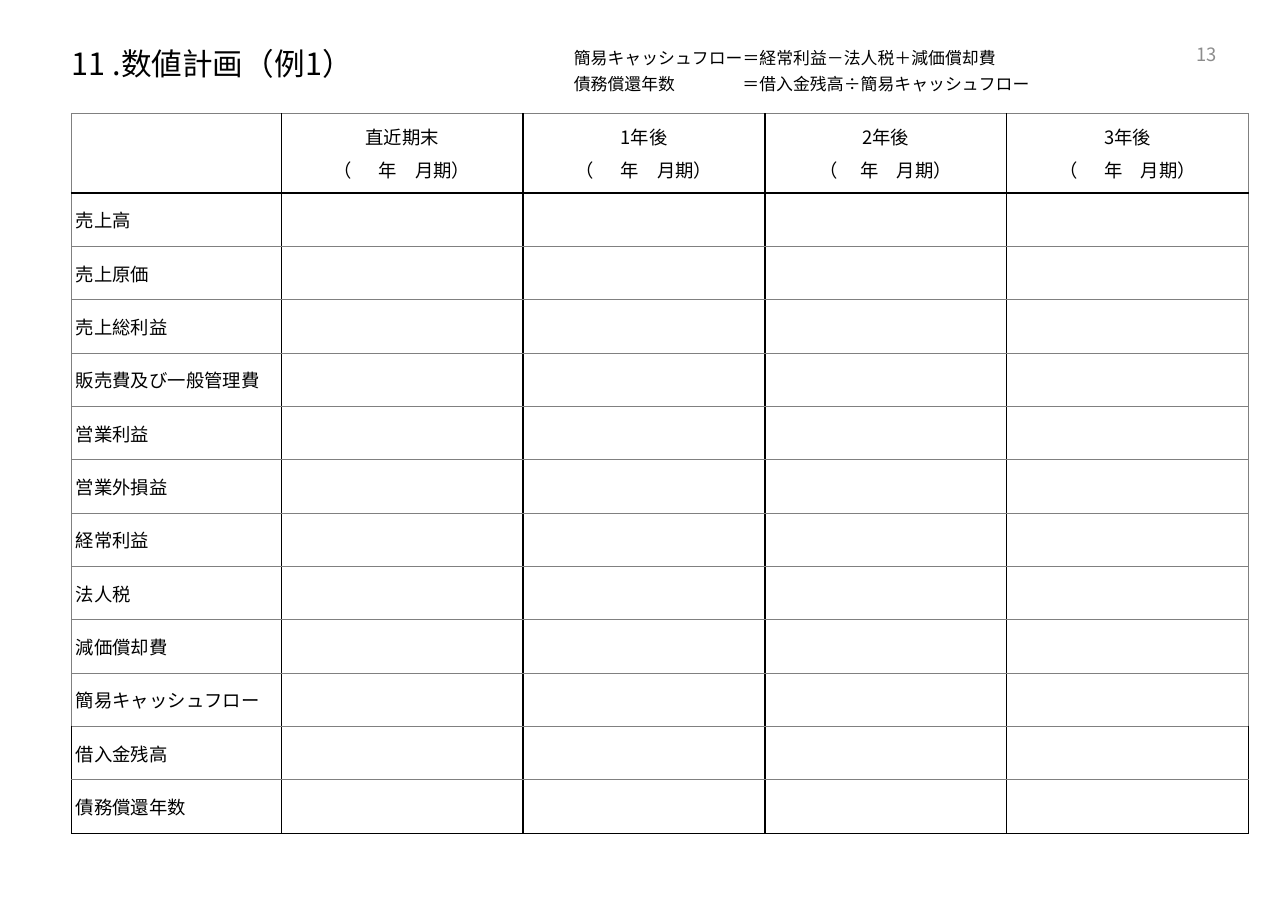
from dataclasses import dataclass

from lxml.etree import SubElement
from pptx import Presentation
from pptx.dml.color import RGBColor as Rgb
from pptx.enum.text import MSO_ANCHOR as Anchor, PP_ALIGN as Align
from pptx.oxml import parse_xml
from pptx.oxml.ns import nsdecls, qn
from pptx.util import Inches, Pt


@dataclass(frozen=True)
class Theme:
    font: str = "Noto Sans CJK JP"
    ink: str = "000000"
    rule: str = "808080"
    muted: str = "8C8C8C"
    title: float = 20
    body: float = 12
    note: float = 11
    thin: float = 0.5
    thick: float = 1


TITLE = "11 .数値計画（例1）"
PAGE_NUMBER = "13"
DEFINITIONS = [
    "簡易キャッシュフロー＝経常利益－法人税＋減価償却費",
    "債務償還年数\t＝借入金残高÷簡易キャッシュフロー",
]
PERIODS = [
    ("直近期末", "（　  年　月期）"),
    ("1年後", "（　  年　月期）"),
    ("2年後", "（　 年　月期）"),
    ("3年後", "（　  年　月期）"),
]
ITEMS = [
    "売上高", "売上原価", "売上総利益", "販売費及び一般管理費", "営業利益", "営業外損益",
    "経常利益", "法人税", "減価償却費", "簡易キャッシュフロー", "借入金残高", "債務償還年数",
]
SECTION_ENDS = ("経常利益", "簡易キャッシュフロー")
DEBT_START = 1 + ITEMS.index("借入金残高")


def assign(target, values):
    for name, value in values.items():
        setattr(target, name, value)


class PlanPage:
    """One slide on a grid of 18 columns and 21 rows."""

    COLUMNS, ROWS = 18, 21

    def __init__(self, deck, theme):
        self.theme = theme
        self.column = deck.slide_width / self.COLUMNS
        self.row = deck.slide_height / self.ROWS
        self.page = deck.slides.add_slide(deck.slide_layouts[5])

    def area(self, left, top, width, height):
        return (round(left * self.column), round(top * self.row),
                round(width * self.column), round(height * self.row))

    def add_lines(self, frame, lines, size, color=None, align=Align.LEFT, after=0):
        for index, line in enumerate(lines):
            para = frame.add_paragraph() if index else frame.paragraphs[0]
            assign(para, {"alignment": align, "space_after": Pt(after)})
            span = para.add_run()
            span.text = line
            assign(span.font, {"name": self.theme.font, "size": Pt(size)})
            span.font.color.rgb = Rgb.from_string(color or self.theme.ink)
            # East Asian glyphs take their own typeface
            SubElement(span.font._element, qn("a:ea"), typeface=self.theme.font)

    def fill_box(self, box, lines, size, anchor=Anchor.TOP, **style):
        assign(box.text_frame, {
            "margin_left": 0, "margin_top": 0, "margin_right": 0, "margin_bottom": 0,
            "word_wrap": True, "vertical_anchor": anchor})
        self.add_lines(box.text_frame, lines, size, **style)
        return box

    def title(self, text, *place):
        box = self.page.shapes.title
        assign(box, dict(zip(("left", "top", "width", "height"), self.area(*place))))
        self.fill_box(box, [text], self.theme.title, Anchor.MIDDLE)

    def text(self, lines, place, size, **style):
        box = self.page.shapes.add_textbox(*self.area(*place))
        return self.fill_box(box, lines, size, **style)

    def tab_stop(self, box, position):
        for para in box.text_frame.paragraphs:
            stops = SubElement(para._p.get_or_add_pPr(), qn("a:tabLst"))
            SubElement(stops, qn("a:tab"), pos=str(position), algn="l")

    def table(self, left, top, widths, heights):
        place = self.area(left, top, sum(widths), sum(heights))
        table = self.page.shapes.add_table(len(heights), len(widths), *place).table
        assign(table, {"first_row": False, "horz_banding": False})
        for column, width in zip(table.columns, widths):
            column.width = round(width * self.column)
        for row, height in zip(table.rows, heights):
            row.height = round(height * self.row)
        return table

    def cell(self, cell, lines, left, pad, borders, **style):
        assign(cell, {"margin_left": Inches(left), "margin_right": 0,
                      "margin_top": Inches(pad), "margin_bottom": Inches(pad),
                      "vertical_anchor": Anchor.MIDDLE})
        cell.fill.background()
        self.add_lines(cell.text_frame, lines, self.theme.body, **style)
        properties = cell._tc.get_or_add_tcPr()
        for index, (side, (color, weight)) in enumerate(borders.items()):
            properties.insert(index, parse_xml(
                f'<a:ln{side} {nsdecls("a")} w="{Pt(weight)}"><a:solidFill>'
                f'<a:srgbClr val="{color}"/></a:solidFill></a:ln{side}>'))


def border_rules(theme):
    """Return the border lookup for a cell at (row, column)."""
    strong, soft = (theme.ink, theme.thick), (theme.rule, theme.thick)
    last_line, last_edge = len(ITEMS) + 1, len(PERIODS) + 1
    lines = {0: soft, 1: strong, last_line: strong}
    lines.update({ITEMS.index(name) + 2: soft for name in SECTION_ENDS})

    def horizontal(line):
        return lines.get(line, (theme.rule, theme.thin))

    def vertical(edge, row):
        return soft if edge in (0, last_edge) and row < DEBT_START else strong

    return lambda row, column: {
        "L": vertical(column, row), "R": vertical(column + 1, row),
        "T": horizontal(row), "B": horizontal(row + 1)}


def main():
    deck = Presentation()
    assign(deck, {"slide_width": Inches(11.69), "slide_height": Inches(8.27)})
    theme = Theme()
    plan = PlanPage(deck, theme)

    # Heading and page number
    plan.title(TITLE, 1, 1, 16, 0.91)
    plan.text([PAGE_NUMBER], (12.8, 1, 4.2, 0.51), theme.body,
              anchor=Anchor.MIDDLE, color=theme.muted, align=Align.RIGHT)

    # Plan table
    table = plan.table(1, 2.62, [2.93] + [3.38] * len(PERIODS),
                       [1.83] + [1.23] * len(ITEMS))
    borders = border_rules(theme)
    for column, lines in enumerate([(), *PERIODS]):
        plan.cell(table.cell(0, column), lines, 0, 0.04, borders(0, column),
                  align=Align.CENTER, after=4)
    for row, item in enumerate(ITEMS, 1):
        for column in range(len(PERIODS) + 1):
            plan.cell(table.cell(row, column), [] if column else [item],
                      0.04, 0 if column else 0.08, borders(row, column))

    # Definitions
    notes = plan.text(DEFINITIONS, (8.02, 1.09, 9.98, 1.09), theme.note, after=4.3)
    plan.tab_stop(notes, Inches(1.53))

    deck.save("out.pptx")


if __name__ == "__main__":
    main()
